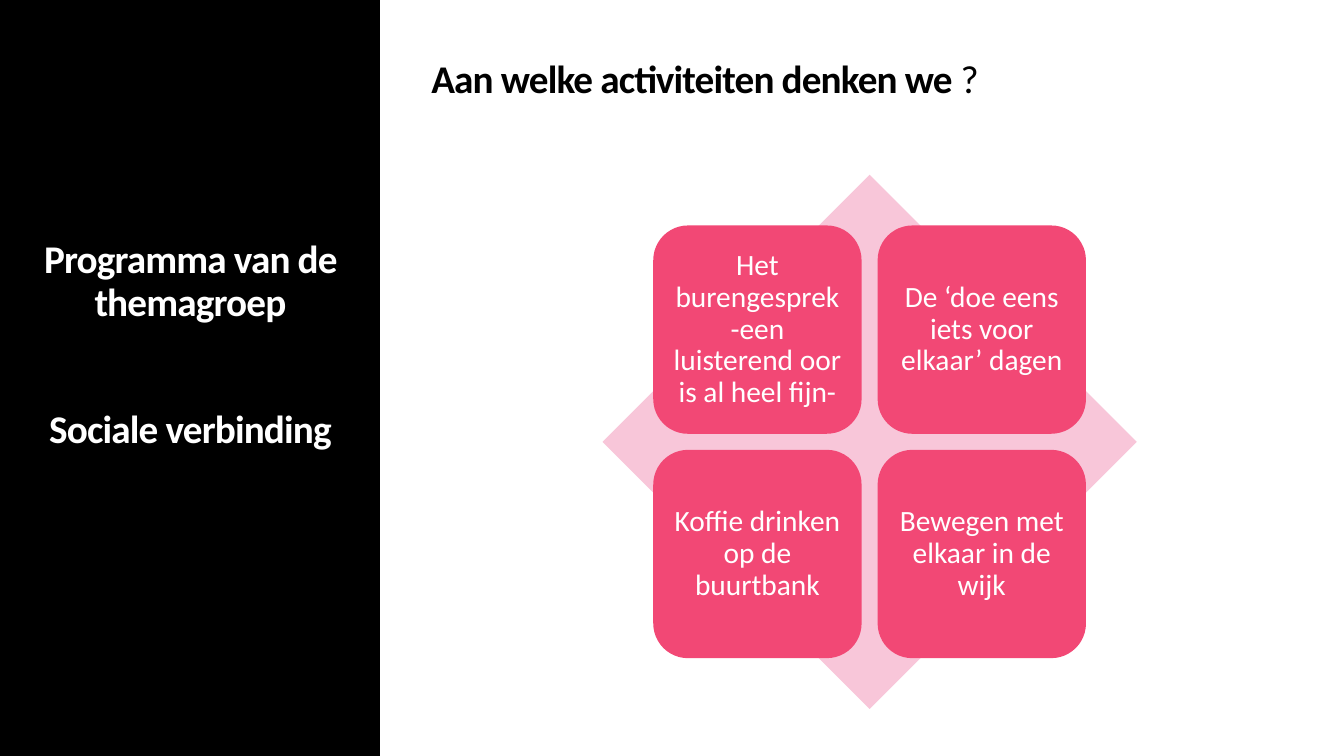
from dataclasses import dataclass

from pptx import Presentation
from pptx.dml.color import RGBColor
from pptx.enum.shapes import MSO_SHAPE
from pptx.enum.text import MSO_ANCHOR, PP_ALIGN
from pptx.util import Pt


@dataclass(frozen=True)
class Theme:
    font: str = "Calibri"
    black: str = "000000"
    white: str = "FFFFFF"
    tile: str = "F24875"
    diamond: str = "F8C6D9"
    heading_size: float = 28
    tile_size: float = 21
    heading_tracking: int = -60
    line_spacing: float = 0.9


@dataclass(frozen=True)
class Box:
    left: float
    top: float
    width: float
    height: float

    def inner(self, left, top, width, height):
        return Box(self.left + left, self.top + top, width, height)

    def lengths(self):
        return Pt(self.left), Pt(self.top), Pt(self.width), Pt(self.height)


THEME = Theme()
ACTIVITIES = [
    "Het burengesprek -een luisterend oor is al heel fijn-",
    "De ‘doe eens iets voor elkaar’ dagen",
    "Koffie drinken op de buurtbank",
    "Bewegen met elkaar in de wijk",
]


def add_filled_shape(page, kind, box, color):
    shape = page.shapes.add_shape(kind, *box.lengths())
    shape.shadow.inherit = False
    shape.fill.solid()
    shape.fill.fore_color.rgb = RGBColor.from_string(color)
    shape.line.fill.background()
    return shape


def add_text_frame(page, box):
    frame = page.shapes.add_textbox(*box.lengths()).text_frame
    frame.word_wrap = True
    return frame


def format_para(para, alignment):
    para.alignment = alignment
    para.line_spacing = THEME.line_spacing


def add_span(para, text, size, color, bold=False, tracking=0):
    span = para.add_run()
    span.text = text
    span.font.name = THEME.font
    span.font.size = Pt(size)
    span.font.bold = bold
    span.font.color.rgb = RGBColor.from_string(color)
    if tracking:
        span.font._element.set("spc", str(tracking))


def add_heading_span(para, text, color, bold=True):
    add_span(para, text, THEME.heading_size, color, bold, THEME.heading_tracking)


def add_sidebar(page, box):
    add_filled_shape(page, MSO_SHAPE.RECTANGLE, box, THEME.black)
    frame = add_text_frame(page, box.inner(20, 167.8, 232, 214))
    program = frame.paragraphs[0]
    topic = frame.add_paragraph()
    topic.space_before = Pt(60.5)
    for para, text in (
        (program, "Programma van de themagroep"),
        (topic, "Sociale verbinding"),
    ):
        format_para(para, PP_ALIGN.CENTER)
        add_heading_span(para, text, THEME.white)


def add_title(page, box):
    para = add_text_frame(page, box).paragraphs[0]
    format_para(para, PP_ALIGN.LEFT)
    add_heading_span(para, "Aan welke activiteiten denken we ", THEME.black)
    add_heading_span(para, "?", THEME.black, bold=False)


def add_tile(page, box, text):
    frame = add_filled_shape(
        page, MSO_SHAPE.ROUNDED_RECTANGLE, box, THEME.tile
    ).text_frame
    frame.word_wrap = True
    frame.vertical_anchor = MSO_ANCHOR.MIDDLE
    frame.margin_left = frame.margin_right = Pt(6.3)
    frame.margin_top = frame.margin_bottom = Pt(6.3)
    para = frame.paragraphs[0]
    format_para(para, PP_ALIGN.CENTER)
    add_span(para, text, THEME.tile_size, THEME.white)


def add_activity_matrix(page, box):
    add_filled_shape(page, MSO_SHAPE.DIAMOND, box, THEME.diamond)
    side = box.width * 0.39
    pitch = box.width * 0.42
    margin = (box.width - side - pitch) / 2
    for index, activity in enumerate(ACTIVITIES):
        row, column = divmod(index, 2)
        tile = box.inner(margin + column * pitch, margin + row * pitch, side, side)
        add_tile(page, tile, activity)


def main():
    deck = Presentation()
    deck.slide_width = Pt(960)
    deck.slide_height = Pt(540)
    page = deck.slides.add_slide(deck.slide_layouts[6])
    add_sidebar(page, Box(0, 0, 271.4, 540))
    add_title(page, Box(301, 38.9, 550, 54))
    add_activity_matrix(page, Box(430.4, 124.8, 381.6, 381.6))
    deck.save("out.pptx")


if __name__ == "__main__":
    main()
